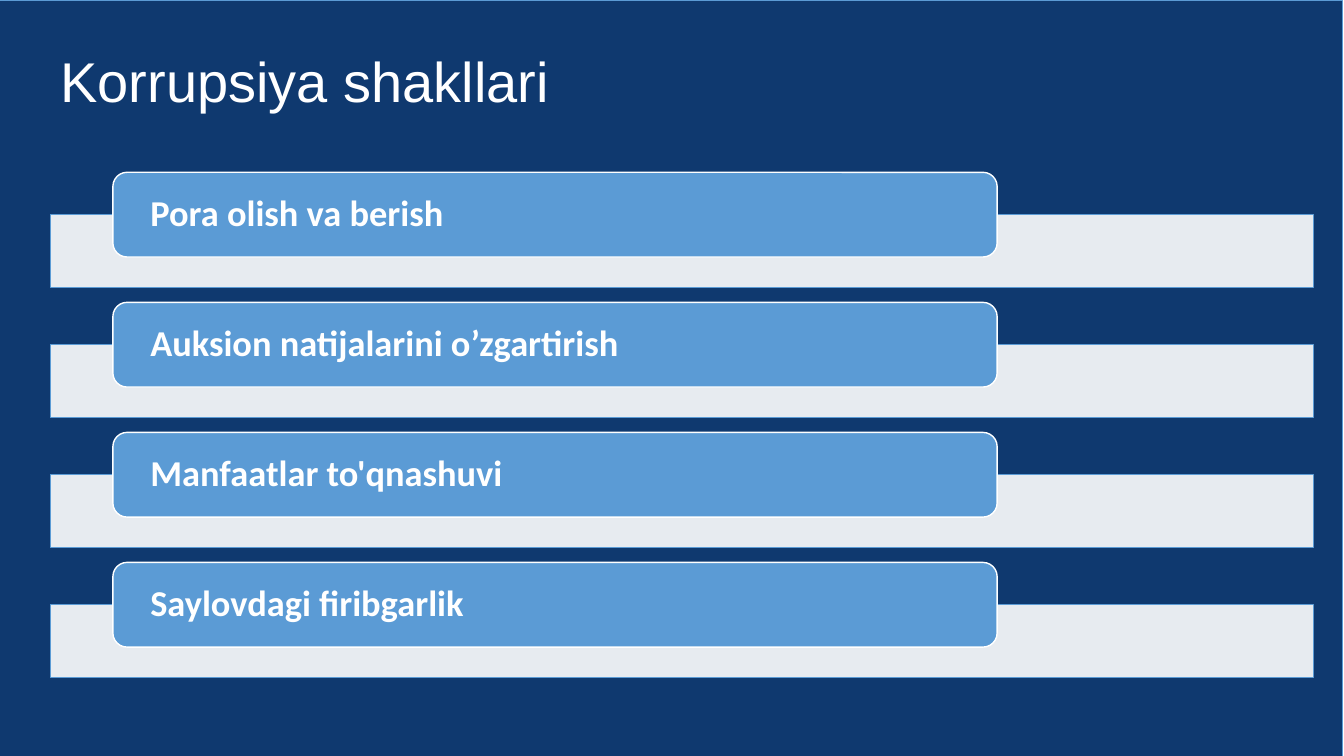
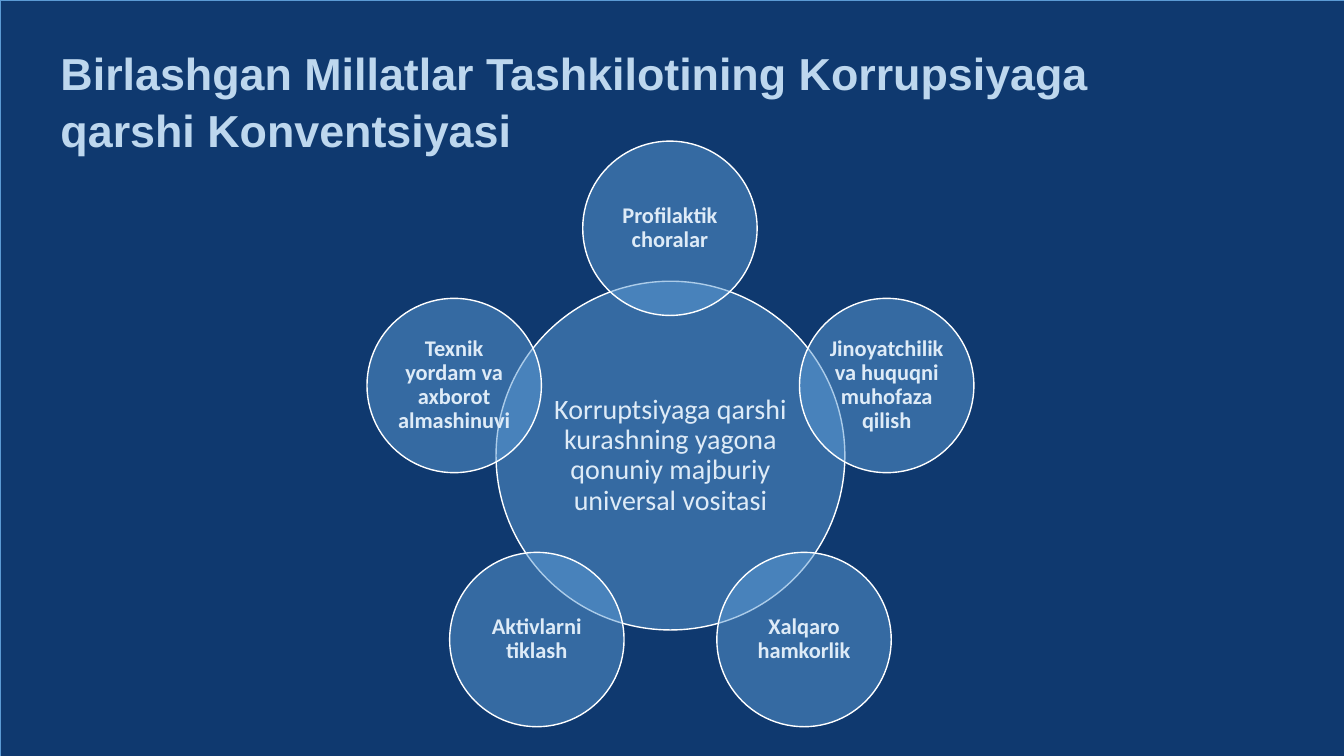
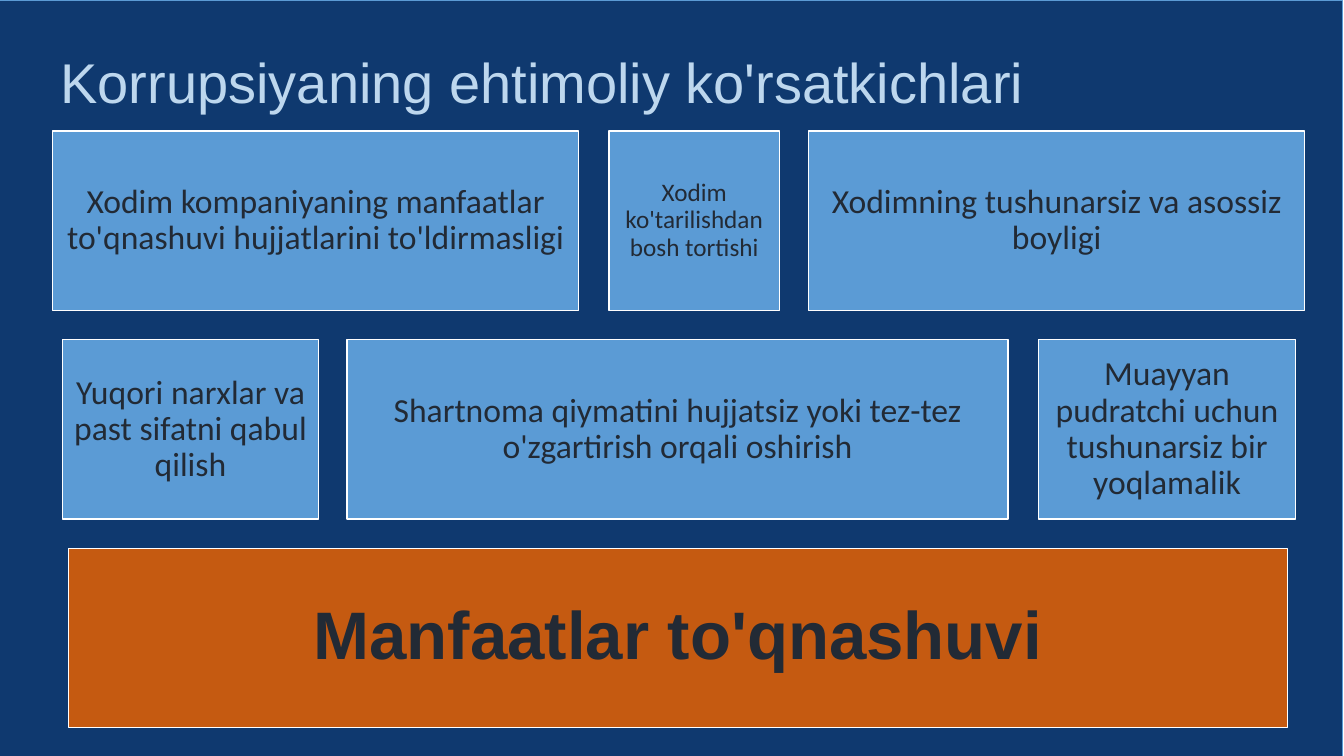
import math
from dataclasses import dataclass

import lxml.etree
import pptx
import pptx.dml.color
import pptx.enum.shapes
import pptx.enum.text
import pptx.oxml.ns
import pptx.util

RGBColor = pptx.dml.color.RGBColor
MSO_SHAPE = pptx.enum.shapes.MSO_SHAPE
PP_ALIGN = pptx.enum.text.PP_ALIGN
MSO_ANCHOR = pptx.enum.text.MSO_ANCHOR

NAVY = RGBColor(0x0F, 0x39, 0x6F)
BLUE = RGBColor(0x5B, 0x9B, 0xD5)
SKY = RGBColor(0xBD, 0xD7, 0xEE)
ICE = RGBColor(0xDE, 0xEB, 0xF7)
WHITE = RGBColor(0xFF, 0xFF, 0xFF)
INK = RGBColor(0x22, 0x2A, 0x35)
ORANGE = RGBColor(0xC5, 0x5A, 0x11)

EMU_PER_PX = 9144
SLIDE_W, SLIDE_H = 1333, 750
TITLE_ONLY = 5


def px(n: float) -> pptx.util.Emu:
    return pptx.util.Emu(round(n) * EMU_PER_PX)


@dataclass(frozen=True)
class Font:
    size: int
    color: RGBColor
    name: str = "Calibri"
    bold: bool = False


@dataclass(frozen=True)
class Box:
    left: float
    top: float
    width: float
    height: float


@dataclass(frozen=True)
class Look:
    kind: MSO_SHAPE
    fill: RGBColor = BLUE
    line: RGBColor = WHITE
    line_pt: float = 1
    alpha: int = 100


@dataclass(frozen=True)
class Tile:
    text: str
    width: int
    font: Font
    fill: RGBColor = BLUE
    inset: int = 10


BACKDROP = Look(MSO_SHAPE.RECTANGLE, NAVY, BLUE, 0.5)
BAR = Look(MSO_SHAPE.RECTANGLE, WHITE, BLUE, alpha=90)
CARD = Look(MSO_SHAPE.ROUNDED_RECTANGLE)
CIRCLE = Look(MSO_SHAPE.OVAL, alpha=50)

CARD_FONT = Font(26, WHITE, bold=True)
HUB_FONT = Font(20, ICE)
SATELLITE_FONT = Font(16, ICE, bold=True)
TILE_FONT = Font(24, INK)
SMALL_TILE_FONT = Font(18, INK)
BANNER_FONT = Font(48, INK, "Arial", True)

FORMS = [
    "Pora olish va berish",
    "Auksion natijalarini o’zgartirish",
    "Manfaatlar to'qnashuvi",
    "Saylovdagi firibgarlik",
]
HUB = "Korruptsiyaga qarshi kurashning yagona qonuniy majburiy universal vositasi"
SATELLITES = [
    "Profilaktik choralar",
    "Jinoyatchilik va huquqni muhofaza qilish",
    "Xalqaro hamkorlik",
    "Aktivlarni tiklash",
    "Texnik yordam va axborot almashinuvi",
]
TILE_ROWS = [
    [
        Tile("Xodim kompaniyaning manfaatlar to'qnashuvi hujjatlarini to'ldirmasligi", 522, TILE_FONT),
        Tile("Xodim ko'tarilishdan bosh tortishi", 169, SMALL_TILE_FONT, inset=7),
        Tile("Xodimning tushunarsiz va asossiz boyligi", 492, TILE_FONT),
    ],
    [
        Tile("Yuqori narxlar va past sifatni qabul qilish", 254, TILE_FONT),
        Tile("Shartnoma qiymatini hujjatsiz yoki tez-tez o'zgartirish orqali oshirish", 656, TILE_FONT),
        Tile("Muayyan pudratchi uchun tushunarsiz bir yoqlamalik", 255, TILE_FONT),
    ],
    [Tile("Manfaatlar to'qnashuvi", 1209, BANNER_FONT, ORANGE, 20)],
]


def write(sp, text: str, font: Font, align: PP_ALIGN, anchor: MSO_ANCHOR,
          inset_x: int, inset_y: int, spacing: float) -> None:
    tf = sp.text_frame
    tf.word_wrap = True
    tf.auto_size = pptx.enum.text.MSO_AUTO_SIZE.NONE
    tf.vertical_anchor = anchor
    tf.margin_left = tf.margin_right = px(inset_x)
    tf.margin_top = tf.margin_bottom = px(inset_y)
    p = tf.paragraphs[0]
    p.alignment = align
    p.line_spacing = spacing
    r = p.add_run()
    r.text = text
    r.font.size = pptx.util.Pt(font.size)
    r.font.name = font.name
    r.font.bold = font.bold
    r.font.color.rgb = font.color


def place(sp, box: Box) -> None:
    sp.left, sp.top = px(box.left), px(box.top)
    sp.width, sp.height = px(box.width), px(box.height)


def add_shape(slide, box: Box, look: Look):
    sp = slide.shapes.add_shape(look.kind, 0, 0, 0, 0)
    place(sp, box)
    sp.shadow.inherit = False
    sp.fill.solid()
    sp.fill.fore_color.rgb = look.fill
    sp.line.color.rgb = look.line
    sp.line.width = pptx.util.Pt(look.line_pt)
    if look.alpha < 100:
        qn = pptx.oxml.ns.qn
        color = sp.element.spPr.find(qn("a:solidFill")).find(qn("a:srgbClr"))
        lxml.etree.SubElement(color, qn("a:alpha"), val=str(look.alpha * 1000))
    return sp


def add_label(slide, box: Box, look: Look, text: str, font: Font,
              inset_x: int, inset_y: int, align: PP_ALIGN = PP_ALIGN.CENTER) -> None:
    sp = add_shape(slide, box, look)
    write(sp, text, font, align, MSO_ANCHOR.MIDDLE, inset_x, inset_y, 0.9)


def add_slide(prs, title: str, font: Font, box: Box, backdrop_left: int = -2):
    slide = prs.slides.add_slide(prs.slide_layouts[TITLE_ONLY])
    sp = slide.shapes.title
    place(sp, box)
    write(sp, title, font, PP_ALIGN.LEFT, MSO_ANCHOR.TOP, 10, 5, 1.05)
    backdrop = add_shape(slide, Box(backdrop_left, 0, SLIDE_W, SLIDE_H), BACKDROP)
    sp.element.addprevious(backdrop.element)
    return slide


def add_forms(prs) -> None:
    slide = add_slide(prs, "Korrupsiya shakllari", Font(40, WHITE, "Arial"), Box(50, 38, 1056, 77))
    for i, text in enumerate(FORMS):
        top = 171 + 129 * i
        add_shape(slide, Box(50, top + 42, 1253, 72), BAR)
        add_label(slide, Box(112, top, 877, 84), CARD, text, CARD_FONT, 33, 0, PP_ALIGN.LEFT)


def add_convention(prs) -> None:
    slide = add_slide(
        prs, "Birlashgan Millatlar Tashkilotining Korrupsiyaga qarshi Konventsiyasi",
        Font(32, SKY, "Arial", True), Box(50, 38, 1056, 118), 0)
    cx, cy, orbit = 665, 452, 226
    hub, satellite = 346, 173
    add_label(slide, Box(cx - hub / 2, cy - hub / 2, hub, hub), CIRCLE, HUB, HUB_FONT, 3, 3)
    for i, text in enumerate(SATELLITES):
        angle = math.tau * i / len(SATELLITES)
        left = cx + orbit * math.sin(angle) - satellite / 2
        top = cy - orbit * math.cos(angle) - satellite / 2
        add_label(slide, Box(left, top, satellite, satellite), CIRCLE, text, SATELLITE_FONT, 2, 2)


def add_indicators(prs) -> None:
    slide = add_slide(prs, "Korrupsiyaning ehtimoliy ko'rsatkichlari",
                      Font(40, SKY, "Arial"), Box(50, 39, 1281, 77))
    cx, top, height, gap = 673, 130, 178, 29
    for row in TILE_ROWS:
        left = cx - (sum(t.width for t in row) + gap * (len(row) - 1)) / 2
        for t in row:
            add_label(slide, Box(left, top, t.width, height), Look(MSO_SHAPE.RECTANGLE, t.fill),
                      t.text, t.font, t.inset, t.inset)
            left += t.width + gap
        top += height + gap


def main() -> None:
    prs = pptx.Presentation()
    prs.slide_width, prs.slide_height = px(SLIDE_W), px(SLIDE_H)
    add_forms(prs)
    add_convention(prs)
    add_indicators(prs)
    prs.save("out.pptx")


if __name__ == "__main__":
    main()
